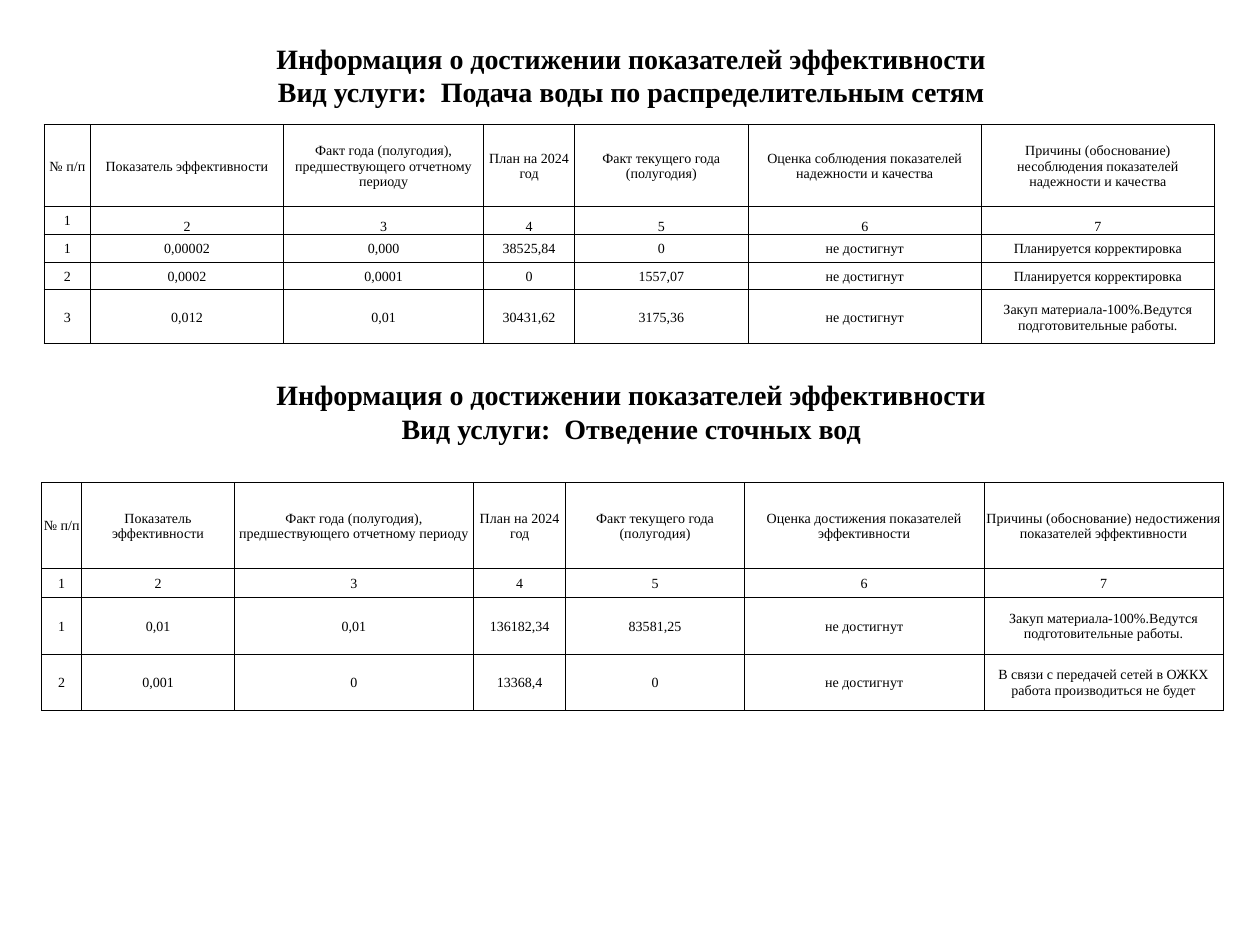
from lxml import etree
from pptx import Presentation, util as u
from pptx.dml.color import RGBColor
from pptx.enum import text
from pptx.oxml import ns

BLACK = RGBColor(0, 0, 0)
WHITE = RGBColor(255, 255, 255)
FONT = "Times New Roman"
MIDDLE, BOTTOM = text.MSO_ANCHOR.MIDDLE, text.MSO_ANCHOR.BOTTOM
HEADING = "Информация о достижении показателей эффективности\vВид услуги:  "
NUMBERS = [str(n) for n in range(1, 8)]
MISSED = "не достигнут"
CORRECTION = "Планируется корректировка"
PURCHASE = "Закуп материала-100%.Ведутся подготовительные работы."


def header(assessment, reasons):
    return ["№ п/п", "Показатель эффективности",
            "Факт года (полугодия), предшествующего отчетному периоду",
            "План на 2024 год", "Факт текущего года (полугодия)",
            assessment, reasons]


SUPPLY = [
    header("Оценка соблюдения показателей надежности и качества",
           "Причины (обоснование) несоблюдения показателей надежности и качества"),
    NUMBERS,
    ["1", "0,00002", "0,000", "38525,84", "0", MISSED, CORRECTION],
    ["2", "0,0002", "0,0001", "0", "1557,07", MISSED, CORRECTION],
    ["3", "0,012", "0,01", "30431,62", "3175,36", MISSED, PURCHASE],
]
SEWERAGE = [
    header("Оценка достижения показателей эффективности",
           "Причины (обоснование) недостижения показателей эффективности"),
    NUMBERS,
    ["1", "0,01", "0,01", "136182,34", "83581,25", MISSED, PURCHASE],
    ["2", "0,001", "0", "13368,4", "0", MISSED,
     "В связи с передачей сетей в ОЖКХ работа производиться не будет"],
]


def format_text(paragraph, size, bold):
    paragraph.alignment = text.PP_ALIGN.CENTER
    paragraph.line_spacing = 1.0
    font = paragraph.font
    font.name, font.size, font.bold = FONT, u.Pt(size), bold
    font.color.rgb = BLACK


def write_heading(box, top, service):
    box.left, box.top = u.Inches(0.51), u.Inches(top)
    box.width, box.height = u.Inches(9), u.Inches(0.77)
    frame = box.text_frame
    frame.word_wrap = True
    frame.auto_size = text.MSO_AUTO_SIZE.NONE
    frame.vertical_anchor = MIDDLE
    frame.text = HEADING + service
    format_text(frame.paragraphs[0], 16, True)


def outline_cell(cell):
    properties = cell._tc.get_or_add_tcPr()
    for position, side in enumerate(("lnL", "lnR", "lnT", "lnB")):
        line = etree.Element(ns.qn("a:" + side), w=str(u.Pt(0.5)))
        fill = etree.SubElement(line, ns.qn("a:solidFill"))
        etree.SubElement(fill, ns.qn("a:srgbClr"), val=str(BLACK))
        properties.insert(position, line)


def write_cell(cell, wording):
    cell.text = wording
    cell.vertical_anchor = MIDDLE
    cell.margin_left = cell.margin_right = cell.margin_top = u.Inches(0.01)
    cell.margin_bottom = 0
    cell.fill.background()
    format_text(cell.text_frame.paragraphs[0], 8, False)
    outline_cell(cell)


def add_indicators(slide, left, top, widths, heights, rows):
    table = slide.shapes.add_table(
        len(rows), len(widths), u.Inches(left), u.Inches(top),
        u.Inches(sum(widths)), u.Inches(sum(heights))).table
    table.first_row = table.horz_banding = False
    for column, width in zip(table.columns, widths):
        column.width = u.Inches(width)
    for row, height, wordings in zip(table.rows, heights, rows):
        row.height = u.Inches(height)
        for cell, wording in zip(row.cells, wordings):
            write_cell(cell, wording)
    return table


def main():
    deck = Presentation()
    deck.slide_width, deck.slide_height = u.Inches(10), u.Inches(7.5)
    slide = deck.slides.add_slide(deck.slide_layouts[5])

    write_heading(slide.shapes.title, 0.21, "Подача воды по распределительным сетям")
    supply = add_indicators(slide, 0.35, 0.99,
                            [0.37, 1.53, 1.59, 0.72, 1.38, 1.85, 1.85],
                            [0.65, 0.22, 0.22, 0.22, 0.43], SUPPLY)
    for column in range(1, len(NUMBERS)):
        supply.cell(1, column).vertical_anchor = BOTTOM
    for row in range(2, len(SUPPLY)):
        fill = supply.cell(row, 0).fill
        fill.solid()
        fill.fore_color.rgb = WHITE

    write_heading(slide.shapes.add_textbox(0, 0, 0, 0), 2.88, "Отведение сточных вод")
    add_indicators(slide, 0.33, 3.83,
                   [0.32, 1.21, 1.9, 0.73, 1.42, 1.9, 1.9],
                   [0.68, 0.23, 0.45, 0.45], SEWERAGE)
    deck.save("out.pptx")


if __name__ == "__main__":
    main()
